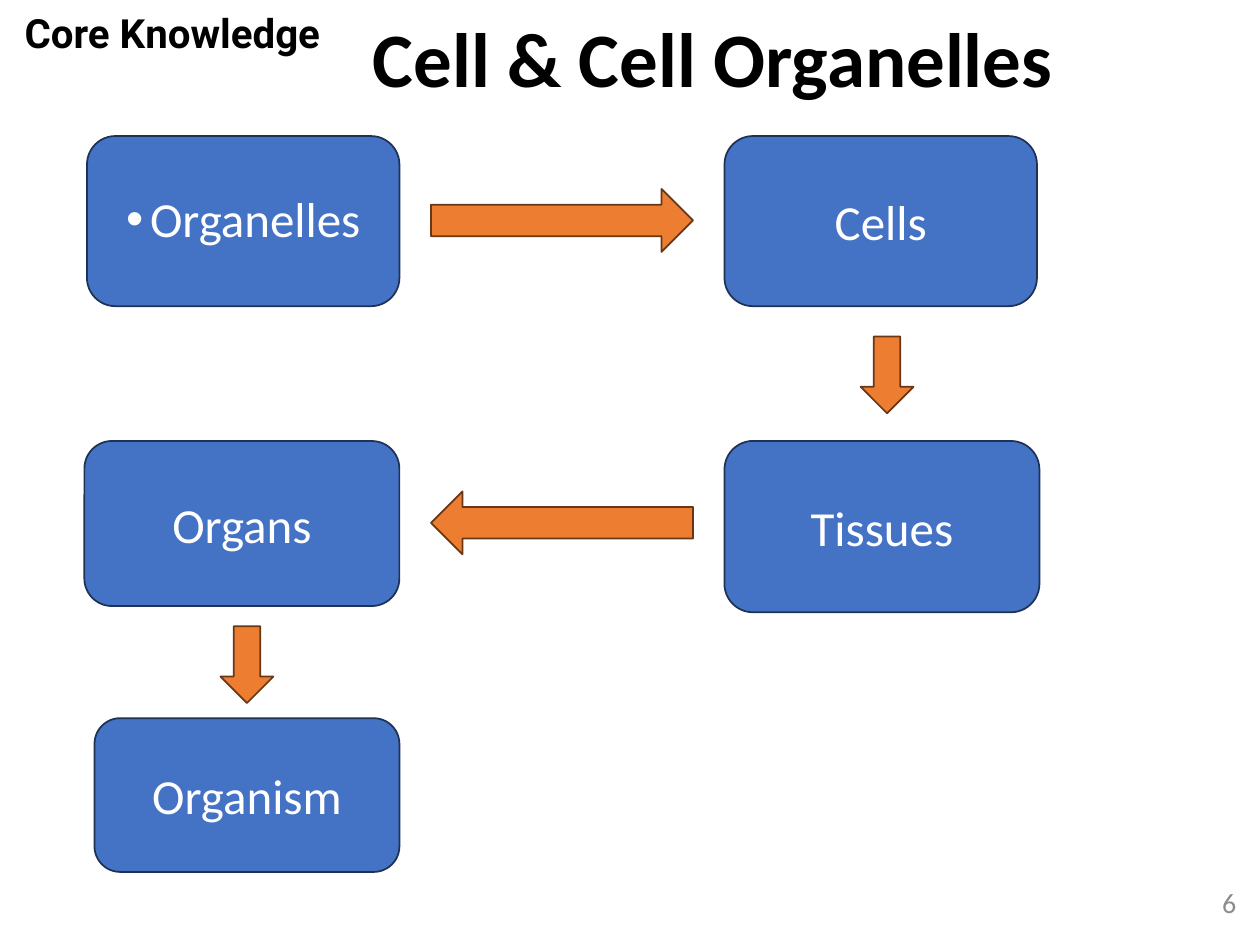
from lxml.etree import SubElement
from pptx import Presentation
from pptx.dml.color import RGBColor
from pptx.enum.shapes import MSO_SHAPE as Shape
from pptx.enum.text import MSO_ANCHOR as Anchor, MSO_AUTO_SIZE as AutoSize, PP_ALIGN as Align
from pptx.oxml.ns import qn
from pptx.util import Inches, Pt

rgb = RGBColor.from_string


def paint(shape, fill, line):
    shape.fill.solid()
    shape.fill.fore_color.rgb = rgb(fill)
    shape.line.color.rgb = rgb(line)
    shape.line.width = Pt(1)


def write(shape, text, size, color, font="Calibri", bold=False, align=Align.CENTER, spacing=None):
    frame = shape.text_frame
    frame.text = text
    frame.word_wrap = True
    frame.auto_size = AutoSize.NONE
    frame.vertical_anchor = Anchor.MIDDLE
    paragraph = frame.paragraphs[0]
    paragraph.alignment = align
    paragraph.line_spacing = spacing
    paragraph.space_before = Pt(0)
    run_font = paragraph.runs[0].font
    run_font.name, run_font.size, run_font.bold = font, Pt(size), bold
    run_font.color.rgb = rgb(color)


prs = Presentation()
prs.slide_width, prs.slide_height = Inches(10), Inches(7.5)
slide = prs.slides.add_slide(prs.slide_layouts[1])
shapes = slide.shapes

# Title
title = shapes.title
title.left, title.top, title.width, title.height = map(Inches, (2.73, 0.07, 5.86, 0.85))
write(title, "Cell & Cell Organelles", 44, "000000", bold=True, spacing=0.9)

# Section label and page number
section = shapes.add_textbox(*map(Inches, (0.02, 0.03, 2.7, 0.5)))
write(section, "Core Knowledge", 23, "000000", font="Roboto", bold=True, spacing=0.9)
label = section.text_frame
label.margin_left = label.margin_right = label.margin_top = label.margin_bottom = Inches(0.05)
page_number = shapes.add_textbox(*map(Inches, (9.31, 6.83, 0.6, 0.67)))
write(page_number, "6", 16, "8C8C8C", align=Align.RIGHT)

# Grid: the left column shares its right edge, the right column its left edge
left_column_end, right_column = 3.17, 5.75
row_tops = [1.08, 3.5, 5.7]

# First level of organisation sits in the body placeholder
organelles = slide.placeholders[1]
organelles.left, organelles.top = Inches(left_column_end - 2.48), Inches(row_tops[0])
organelles.width, organelles.height = Inches(2.48), Inches(1.35)
outline = SubElement(organelles._element.spPr, qn("a:prstGeom"), prst="roundRect")
SubElement(outline, qn("a:avLst"))
paint(organelles, "4472C4", "1E3256")
write(organelles, "Organelles", 28, "FFFFFF", spacing=0.9)
bullet_props = organelles.text_frame.paragraphs[0]._p.get_or_add_pPr()
bullet_props.set("marL", str(Inches(0.19)))
bullet_props.set("indent", str(-Inches(0.19)))
SubElement(bullet_props, qn("a:buChar"), char="•")

# Remaining levels: name, left, row, width, height
levels = [
    ("Cells", right_column, 0, 2.48, 1.35),
    ("Organs", left_column_end - 2.5, 1, 2.5, 1.31),
    ("Tissues", right_column, 1, 2.5, 1.36),
    ("Organism", left_column_end - 2.42, 2, 2.42, 1.22),
]
for name, left, row, width, height in levels:
    level = shapes.add_shape(Shape.ROUNDED_RECTANGLE,
                             *map(Inches, (left, row_tops[row], width, height)))
    level.shadow.inherit = False
    paint(level, "4472C4", "1E3256")
    write(level, name, 28, "FFFFFF")

# Arrows from each level to the next
across, down = (2.08, 0.5), (0.42, 0.61)
arrow_left = left_column_end + 0.25
steps = [
    (Shape.RIGHT_ARROW, arrow_left, 1.5, across),
    (Shape.DOWN_ARROW, 6.83, 2.67, down),
    (Shape.DOWN_ARROW, 1.75, 4.97, down),
    (Shape.LEFT_ARROW, arrow_left, 3.9, across),
]
for direction, left, top, size in steps:
    arrow = shapes.add_shape(direction, *map(Inches, (left, top, *size)))
    arrow.shadow.inherit = False
    paint(arrow, "ED7D31", "683715")

prs.save("out.pptx")
